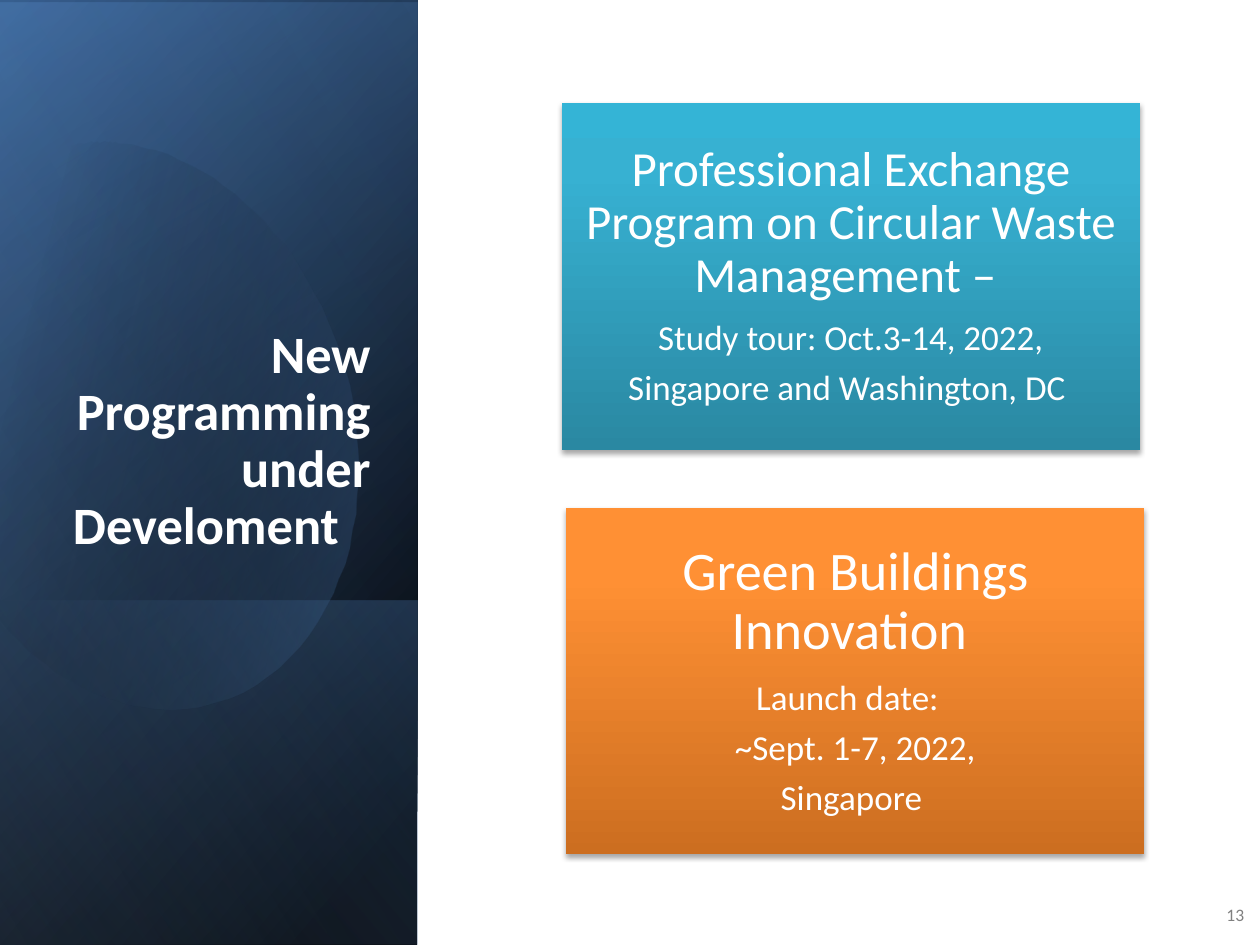
from math import cos, radians, sin

from lxml.etree import SubElement
from pptx import Presentation
from pptx.dml.color import RGBColor
from pptx.enum.shapes import MSO_SHAPE
from pptx.enum.text import MSO_ANCHOR, MSO_AUTO_SIZE, PP_ALIGN
from pptx.oxml.ns import qn
from pptx.util import Pt

PANEL_WIDTH = 238.5
SLIDE_WIDTH, SLIDE_HEIGHT = 720, 540


def rgb(value):
    return RGBColor.from_string(value)


def bezier(start, first, second, end, steps=24):
    """Points along a cubic curve, without its start."""
    for step in range(1, steps + 1):
        t = step / steps
        weights = ((1 - t) ** 3, 3 * t * (1 - t) ** 2, 3 * t * t * (1 - t), t ** 3)
        yield tuple(sum(w * point[axis] for w, point in zip(weights, (start, first, second, end)))
                    for axis in (0, 1))


class SlideBuilder:
    font_name = "Calibri"
    text_color = "FFFFFF"

    def __init__(self, slide):
        self.slide = slide

    def add_color(self, parent, color, opacity):
        node = SubElement(parent, qn("a:srgbClr"), val=color)
        if opacity < 100:
            SubElement(node, qn("a:alpha"), val=str(opacity * 1000))

    def paint(self, shape, stops, angle):
        """Gradient fill; each stop is position, color and opacity in percent."""
        shape.shadow.inherit = False
        shape.line.fill.background()
        shape.fill.gradient()
        gradient = shape.element.spPr.find(qn("a:gradFill"))
        gradient.set("rotWithShape", "1")
        for child in list(gradient):
            gradient.remove(child)
        stop_list = SubElement(gradient, qn("a:gsLst"))
        for position, color, opacity in stops:
            stop = SubElement(stop_list, qn("a:gs"), pos=str(position * 1000))
            self.add_color(stop, color, opacity)
        SubElement(gradient, qn("a:lin"), ang=str(angle * 60000), scaled="0")

    def add_shadow(self, shape, color, opacity, blur, distance):
        effects = shape.element.spPr.find(qn("a:effectLst"))
        shadow = SubElement(effects, qn("a:outerShdw"), blurRad=str(Pt(blur)),
                            dist=str(Pt(distance)), dir="5400000", rotWithShape="0")
        self.add_color(shadow, color, opacity)

    def rectangle(self, left, top, width, height):
        return self.slide.shapes.add_shape(
            MSO_SHAPE.RECTANGLE, Pt(left), Pt(top), Pt(width), Pt(height))

    def panel(self, top, height, stops, angle):
        """Side panel: a mirrored rectangle on a quarter turn."""
        shift = (PANEL_WIDTH - height) / 2
        shape = self.rectangle(shift, top - shift, height, PANEL_WIDTH)
        shape.rotation = 90
        shape.element.spPr.find(qn("a:xfrm")).set("flipH", "1")
        self.paint(shape, stops, angle)

    def outline(self, points, center, rotation, stops, angle):
        """Freeform through the points, stored upright and then rotated."""
        turn = radians(-rotation)
        upright = []
        for x, y in points:
            dx, dy = x - center[0], y - center[1]
            upright.append((center[0] + dx * cos(turn) - dy * sin(turn),
                            center[1] + dx * sin(turn) + dy * cos(turn)))
        builder = self.slide.shapes.build_freeform(*upright[0], scale=Pt(1))
        builder.add_line_segments(upright[1:], close=True)
        shape = builder.convert_to_shape()
        shape.rotation = rotation
        self.paint(shape, stops, angle)

    def set_text(self, shape, lines, frame_format, paragraph_format, bold=False, gap=0):
        """Lines are text and size; gap is the space after as a share of the size."""
        frame = shape.text_frame
        frame_values = {"word_wrap": True, "auto_size": MSO_AUTO_SIZE.NONE, **frame_format}
        for name, value in frame_values.items():
            setattr(frame, name, value)
        for index, (text, size) in enumerate(lines):
            paragraph = frame.add_paragraph() if index else frame.paragraphs[0]
            paragraph_values = {"space_before": Pt(0), "space_after": Pt(size * gap),
                                **paragraph_format}
            for name, value in paragraph_values.items():
                setattr(paragraph, name, value)
            run = paragraph.add_run()
            run.text = text
            font_values = {"name": self.font_name, "size": Pt(size), "bold": bold}
            for name, value in font_values.items():
                setattr(run.font, name, value)
            run.font.color.rgb = rgb(self.text_color)

    def title(self, text, size, left, top, width, height):
        shape = self.slide.shapes.title
        box = {"left": left, "top": top, "width": width, "height": height}
        for name, value in box.items():
            setattr(shape, name, Pt(value))
        # The title lies on top of the panels
        shape.element.getparent().append(shape.element)
        self.set_text(shape, [(text, size)], {"vertical_anchor": MSO_ANCHOR.BOTTOM},
                      {"alignment": PP_ALIGN.RIGHT, "line_spacing": 0.9}, bold=True)

    def card(self, left, top, stops, margin, lines):
        shape = self.rectangle(left, top, 330.5, 198)
        self.paint(shape, stops, 270)
        self.add_shadow(shape, "000000", 35, 3.1, 1.8)
        margins = {f"margin_{side}": Pt(margin) for side in ("left", "top", "right", "bottom")}
        self.set_text(shape, lines, {"vertical_anchor": MSO_ANCHOR.MIDDLE, **margins},
                      {"alignment": PP_ALIGN.CENTER, "line_spacing": 0.9}, gap=0.35)

    def page_number(self, text):
        shape = self.slide.shapes.add_textbox(Pt(691), Pt(508.5), Pt(27), Pt(28.5))
        self.set_text(shape, [(text, 10)], {"vertical_anchor": MSO_ANCHOR.MIDDLE},
                      {"alignment": PP_ALIGN.RIGHT}, gap=0.6)
        shape.text_frame.paragraphs[0].runs[0].font.color.rgb = rgb("808080")


def blob_points():
    points = [(69, 82)]
    for curve in [((123, 88), (176, 138), (196.5, 209)),
                  ((221, 297), (188.5, 382), (123, 401)),
                  ((82, 413), (38, 396), (5, 360))]:
        points += bezier(points[-1], *curve)
    points += [(-2, 351.5), (-18, 119.5), (-11, 111)]
    for curve in [((1.5, 98.5), (16, 90), (32.5, 85)),
                  ((44.5, 81.5), (57, 80.5), (69, 82))]:
        points += bezier(points[-1], *curve)
    return points


def main():
    presentation = Presentation()
    presentation.slide_width, presentation.slide_height = Pt(SLIDE_WIDTH), Pt(SLIDE_HEIGHT)
    builder = SlideBuilder(presentation.slides.add_slide(presentation.slide_layouts[5]))

    # Layered side panel
    builder.panel(0, SLIDE_HEIGHT, [(8, "000000", 100), (100, "376092", 100)], 50)
    builder.panel(1.5, SLIDE_HEIGHT, [(0, "000000", 0), (99, "4F81BD", 46)], 30)
    builder.panel(343, 197, [(2, "4F81BD", 29), (100, "000000", 30)], 130)
    builder.outline(blob_points(), (85.7, 240.8), -16.1,
                    [(29, "000000", 0), (100, "4F81BD", 43)], 30)
    builder.panel(0, SLIDE_HEIGHT, [(0, "000000", 0), (99, "95B3D7", 11)], 120)

    # Title and page number
    builder.title("New Programming under Develoment 		", 30, 34.5, 132.5, 184.5, 188.5)
    builder.page_number("13")

    # Program cards
    builder.card(321, 59, [(0, "2A88A2", 100), (80, "37B1D2", 100), (100, "34B4D6", 100)], 8.4, [
        ("Professional Exchange Program on Circular Waste Management – ", 28),
        ("Study tour: Oct.3-14, 2022,", 20),
        ("Singapore and Washington, DC ", 20)])
    builder.card(323.5, 290, [(0, "CC6E20", 100), (80, "FF9034", 100), (100, "FF9136", 100)], 9.3, [
        ("Green Buildings Innovation ", 31),
        ("Launch date:  ", 20),
        ("~Sept. 1-7, 2022,", 20),
        ("Singapore ", 20)])

    presentation.save("out.pptx")


if __name__ == "__main__":
    main()
